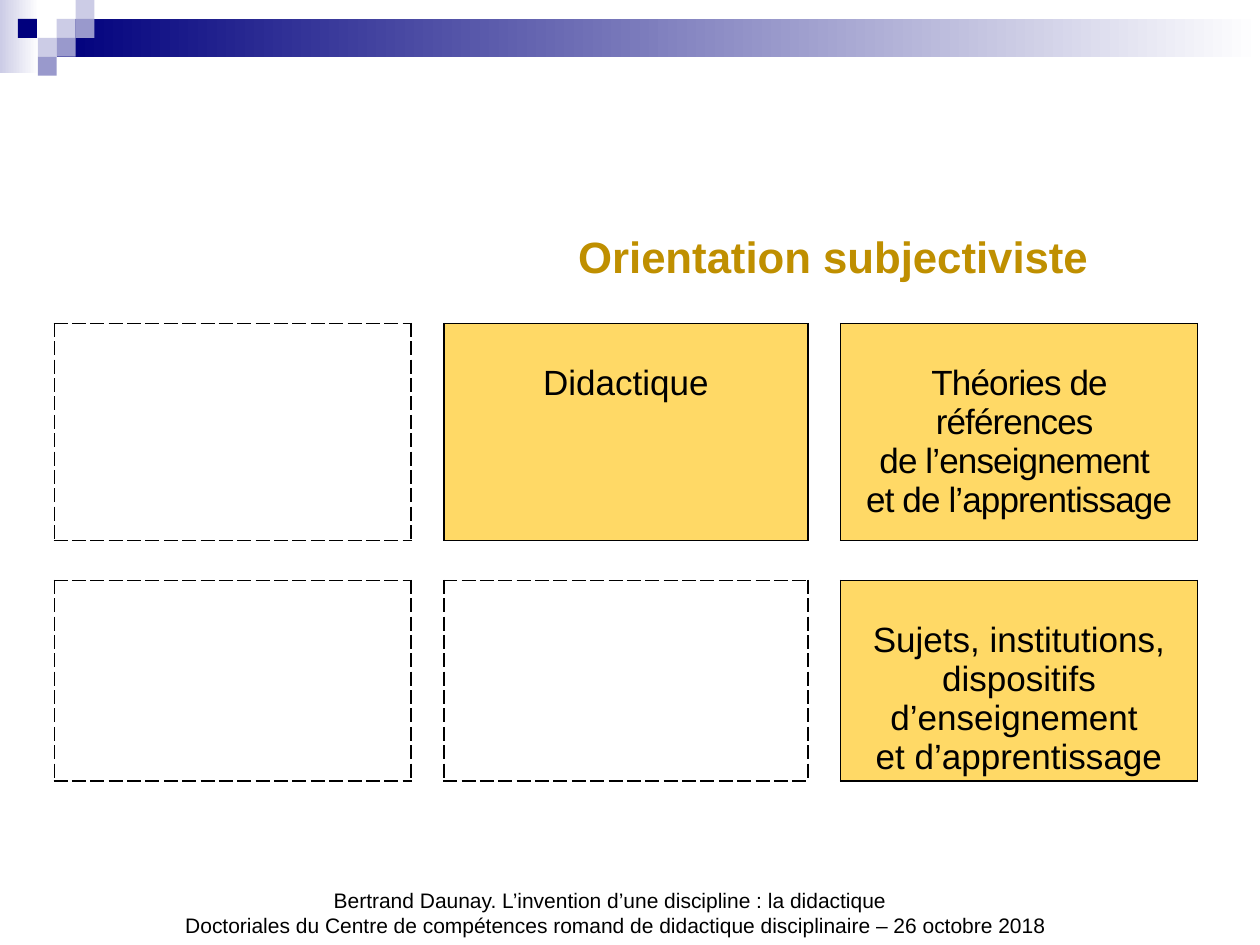
import pptx
import pptx.dml.color
import pptx.enum.shapes
import pptx.enum.text
import pptx.util
from lxml import etree

Pt = pptx.util.Pt
ALIGN = pptx.enum.text.PP_ALIGN
ANCHOR = pptx.enum.text.MSO_ANCHOR

UNIT = 10.8
BANDS = [
    (0, 0, 22.3, 41.8, "CCCCE6"),
    (32.4, 10.8, 687.6, 21.6, "00007D"),
]
SQUARES = [
    (3, 1, "CCCCE6"), (4, 0, "CCCCE6"), (4, 1, "9999CC"), (2, 2, "CCCCE6"),
    (0.95, 1, "00007D"), (3, 2, "9999CC"), (2, 3, "9999CC"),
]
TITLE = "Orientation subjectiviste"
FOOTER = [
    "Bertrand Daunay. L’invention d’une discipline\u00a0: la didactique  ",
    "Doctoriales du Centre de compétences romand de didactique disciplinaire – 26 octobre 2018",
]
COLUMNS = [204, 18.7, 208, 18.7, 204]
ROWS = [123.8, 23, 114.5]
BOXES = {
    (0, 0): "",
    (0, 2): "Didactique",
    (0, 4): "Théories de références \nde l’enseignement \net de l’apprentissage",
    (2, 0): "",
    (2, 2): "",
    (2, 4): "Sujets, institutions, dispositifs d’enseignement \net d’apprentissage",
}
TIGHT_BOX = (0, 4)
SIDES = [("lnL", 0, -1), ("lnR", 0, 1), ("lnT", -1, 0), ("lnB", 1, 0)]


def rgb(color):
    return pptx.dml.color.RGBColor.from_string(color)


def add_rect(s, x, y, w, h):
    sp = s.shapes.add_shape(pptx.enum.shapes.MSO_SHAPE.RECTANGLE, Pt(x), Pt(y), Pt(w), Pt(h))
    sp.shadow.inherit = False
    sp.line.fill.background()
    return sp


def format_text(tf, size, color, align, bold=False):
    for p in tf.paragraphs:
        p.alignment = align
        for r in p.runs:
            r.font.name = "Arial"
            r.font.size = Pt(size)
            r.font.bold = bold
            r.font.color.rgb = rgb(color)


def add_text(s, x, y, w, h, text, anchor):
    tf = s.shapes.add_textbox(Pt(x), Pt(y), Pt(w), Pt(h)).text_frame
    tf.word_wrap = True
    tf.vertical_anchor = anchor
    tf.text = text
    return tf


def add_border(tcPr, side, box):
    ns = "{" + tcPr.nsmap["a"] + "}"
    ln = etree.SubElement(tcPr, ns + side, w=str(Pt(1)))
    if box is None:
        etree.SubElement(ln, ns + "noFill")
        return
    fill = etree.SubElement(ln, ns + "solidFill")
    etree.SubElement(fill, ns + "srgbClr", val="000000")
    etree.SubElement(ln, ns + "prstDash", val="solid" if box else "dash")


def fill_cell(cell, row, col):
    text = BOXES.get((row, col))
    cell.margin_left = cell.margin_right = Pt(5 if text else 0)
    cell.margin_top = Pt(23 if text else 0)
    cell.margin_bottom = 0
    tcPr = cell._tc.get_or_add_tcPr()
    for side, dr, dc in SIDES:
        add_border(tcPr, side, BOXES.get((row, col), BOXES.get((row + dr, col + dc))))
    if not text:
        cell.fill.background()
        return
    cell.fill.solid()
    cell.fill.fore_color.rgb = rgb("FFD966")
    p = cell.text_frame.paragraphs[0]
    p.text = text
    format_text(cell.text_frame, 20, "000000", ALIGN.CENTER)
    if (row, col) == TIGHT_BOX:
        for r in p.runs:
            r.font._element.set("spc", "-50")


def add_grid(s):
    table = s.shapes.add_table(len(ROWS), len(COLUMNS), Pt(31), Pt(185),
                               Pt(sum(COLUMNS)), Pt(sum(ROWS))).table
    table.first_row = table.horz_banding = False
    for column, width in zip(table.columns, COLUMNS):
        column.width = Pt(width)
    for row, height in enumerate(ROWS):
        table.rows[row].height = Pt(height)
        for col in range(len(COLUMNS)):
            fill_cell(table.cell(row, col), row, col)


def main():
    prs = pptx.Presentation()
    prs.slide_width, prs.slide_height = Pt(720), Pt(540)
    s = prs.slides.add_slide(prs.slide_layouts[6])

    for x, y, w, h, color in BANDS:
        fill = add_rect(s, x, y, w, h).fill
        fill.gradient()
        fill.gradient_angle = 0
        for stop, stop_color in zip(fill.gradient_stops, (color, "FFFFFF")):
            stop.color.rgb = rgb(stop_color)
    for col, row, color in SQUARES:
        sp = add_rect(s, col * UNIT, row * UNIT, UNIT, UNIT)
        sp.fill.solid()
        sp.fill.fore_color.rgb = rgb(color)

    add_grid(s)
    tf = add_text(s, 20, 503.3, 664, 36, "\n".join(FOOTER), ANCHOR.BOTTOM)
    format_text(tf, 12, "000000", ALIGN.CENTER)
    tf = add_text(s, 303, 127.5, 330, 59, TITLE, ANCHOR.TOP)
    tf.margin_left = Pt(27.4)
    format_text(tf, 25, "BF8F00", ALIGN.LEFT, bold=True)

    prs.save("out.pptx")


if __name__ == "__main__":
    main()
